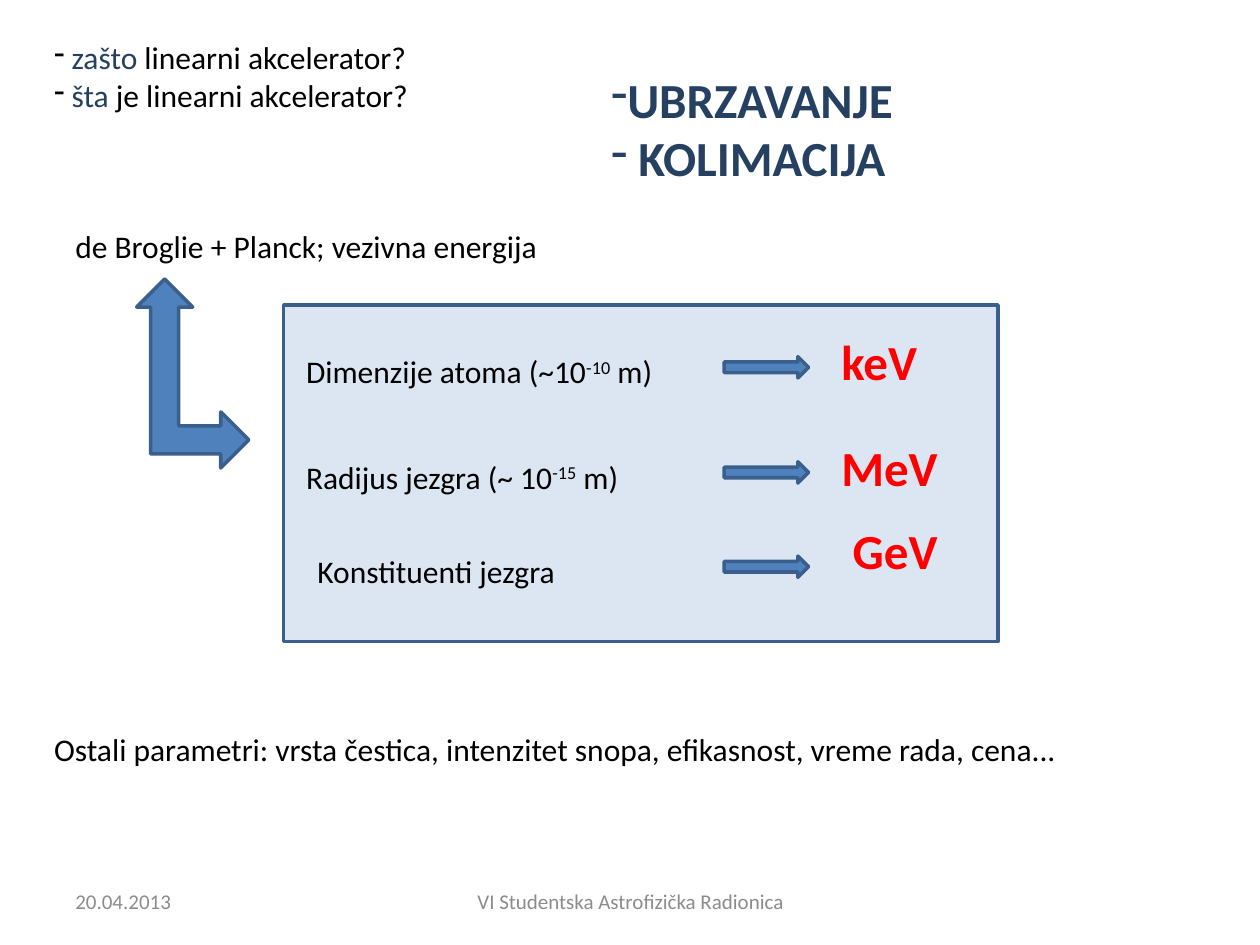
from dataclasses import dataclass

from lxml.etree import SubElement
from pptx import Presentation
from pptx.dml.color import RGBColor
from pptx.enum.shapes import MSO_SHAPE
from pptx.enum.text import MSO_ANCHOR, MSO_AUTO_SIZE, PP_ALIGN
from pptx.oxml.ns import qn
from pptx.util import Cm, Pt


@dataclass(frozen=True)
class Theme:
    font: str = "Calibri"
    text: str = "000000"
    navy: str = "254061"
    red: str = "FF0000"
    grey: str = "8C8C8C"
    panel: str = "DCE6F2"
    arrow: str = "4F81BD"
    outline: str = "3A5F8C"
    small: int = 12
    body: int = 18
    large: int = 28
    line: int = 2


THEME = Theme()


def rgb(code):
    return RGBColor.from_string(code)


def add_dash(p):
    """Give the paragraph a dash bullet without an indent."""
    pPr = p._p.get_or_add_pPr()
    pPr.set("marL", "0")
    pPr.set("indent", "0")
    SubElement(pPr, qn("a:buFontTx"))
    SubElement(pPr, qn("a:buChar")).set("char", "-")


def add_run(p, text, size, color, bold=False, raised=False):
    r = p.add_run()
    r.text = text
    r.font.name = THEME.font
    r.font.size = Pt(size)
    r.font.bold = bold
    r.font.color.rgb = rgb(color)
    if raised:
        r.font._element.set("baseline", "30000")


def add_box(s, left, top, width, height):
    tf = s.shapes.add_textbox(Cm(left), Cm(top), Cm(width), Cm(height)).text_frame
    tf.word_wrap = True
    tf.auto_size = MSO_AUTO_SIZE.SHAPE_TO_FIT_TEXT
    return tf


def add_line(s, text, left, top, width, height=1.02, size=THEME.body,
             color=THEME.text, bold=False):
    tf = add_box(s, left, top, width, height)
    add_run(tf.paragraphs[0], text, size, color, bold)
    return tf


def add_footer(s, text, left, width, align=PP_ALIGN.LEFT):
    tf = add_line(s, text, left, 17.65, width, size=THEME.small, color=THEME.grey)
    tf.auto_size = MSO_AUTO_SIZE.NONE
    tf.vertical_anchor = MSO_ANCHOR.MIDDLE
    tf.paragraphs[0].alignment = align


def add_questions(s):
    tf = add_box(s, 0.84, 0.64, 10.16, 1.8)
    questions = [("zašto", " linearni akcelerator?"), ("šta", " je linearni akcelerator?")]
    for i, (word, rest) in enumerate(questions):
        p = tf.add_paragraph() if i else tf.paragraphs[0]
        add_dash(p)
        add_run(p, " ", THEME.body, THEME.text)
        add_run(p, word, THEME.body, THEME.navy)
        add_run(p, rest, THEME.body, THEME.text)


def add_goals(s):
    tf = add_box(s, 12.07, 1.27, 11.43, 2.64)
    for i, goal in enumerate(["UBRZAVANJE", " KOLIMACIJA"]):
        p = tf.add_paragraph() if i else tf.paragraphs[0]
        add_dash(p)
        add_run(p, goal, THEME.large, THEME.navy, bold=True)


def add_filled(s, kind, left, top, width, height, fill=THEME.arrow):
    sp = s.shapes.add_shape(kind, Cm(left), Cm(top), Cm(width), Cm(height))
    sp.shadow.inherit = False
    sp.fill.solid()
    sp.fill.fore_color.rgb = rgb(fill)
    sp.line.color.rgb = rgb(THEME.outline)
    sp.line.width = Pt(THEME.line)
    return sp


def add_scale(s, label, exponent, label_at, energy, energy_at):
    """Add one row: a length scale, an arrow and the energy it calls for."""
    left, top = label_at
    tf = add_line(s, label, left, top, 8.05)
    if exponent:
        add_run(tf.paragraphs[0], exponent, THEME.body, THEME.text, raised=True)
        add_run(tf.paragraphs[0], " m)", THEME.body, THEME.text)
    add_filled(s, MSO_SHAPE.RIGHT_ARROW, 14.6, top + 0.21, 1.7, 0.43)
    add_line(s, energy, *energy_at, 2.96, 1.45, THEME.large, THEME.red, bold=True)


def main():
    prs = Presentation()
    prs.slide_width, prs.slide_height = Cm(25.4), Cm(19.05)
    s = prs.slides.add_slide(prs.slide_layouts[6])

    add_questions(s)
    add_goals(s)
    add_line(s, "de Broglie + Planck; vezivna energija", 1.27, 4.45, 9.96)

    add_filled(s, MSO_SHAPE.FLOWCHART_PROCESS, 5.72, 6.15, 14.4, 6.78, THEME.panel)
    add_scale(s, "Dimenzije atoma (~10", "-10", (5.92, 6.98), "keV", (16.71, 6.55))
    add_scale(s, "Radijus jezgra (~ 10", "-15", (5.92, 9.1), "MeV", (16.71, 8.69))
    add_scale(s, "Konstituenti jezgra", None, (6.15, 11), "GeV", (16.94, 10.36))
    bent = add_filled(s, MSO_SHAPE.LEFT_UP_ARROW, 1.98, 6.4, 3.81, 2.26)
    bent.rotation = 90

    add_line(s, "Ostali parametri: vrsta čestica, intenzitet snopa, efikasnost, "
             "vreme rada, cena...", 0.84, 14.6, 22.66)
    add_footer(s, "20.04.2013", 1.27, 5.92)
    add_footer(s, "VI Studentska Astrofizička Radionica", 8.69, 8.05, PP_ALIGN.CENTER)

    prs.save("out.pptx")


if __name__ == "__main__":
    main()
